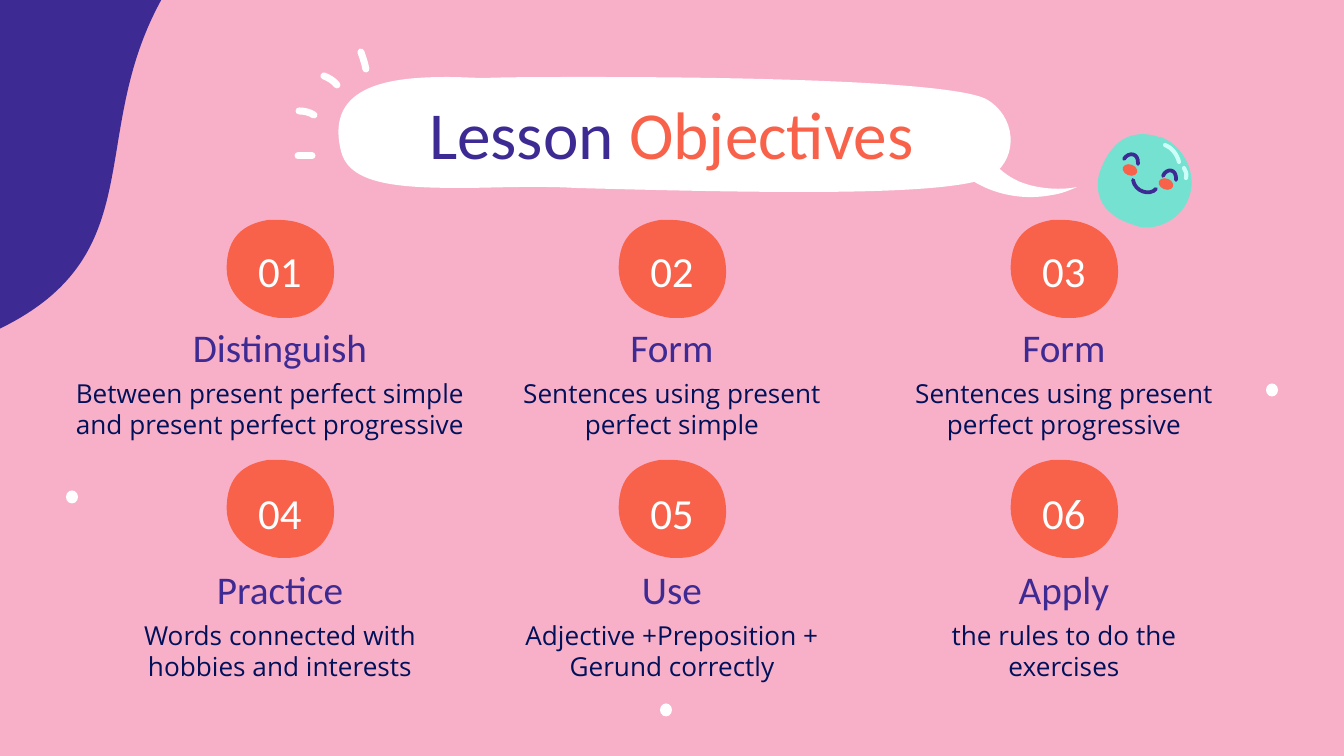
from lxml.etree import SubElement
from pptx import Presentation
from pptx.dml.color import RGBColor
from pptx.enum.shapes import MSO_SHAPE as Preset
from pptx.enum.text import MSO_ANCHOR as Anchor, MSO_AUTO_SIZE as AutoSize, PP_ALIGN as Align
from pptx.oxml.ns import qn
from pptx.util import Emu, Pt

WIDTH, HEIGHT = 1344, 756
SCALE = 9144000 / WIDTH
INSET = 13
COLORS = {
    "pink": "F8B0C8", "violet": "3E2A93", "coral": "F8624A", "white": "FFFFFF",
    "navy": "00115A", "mint": "75E1D1", "shine": "CCFFF7",
}
STYLES = {
    "title": {"size": Pt(36), "name": "Calibri"},
    "number": {"size": Pt(23), "name": "Calibri"},
    "heading": {"size": Pt(21), "name": "Calibri"},
    "body": {"size": Pt(14), "name": "Open Sans"},
}
CORNER = [(308, -149), (308, -149), (-117, -134), (-175, -35), (-208, 23), (-212, 126),
          (-194, 214), (-175, 302), (-132, 374), (-73, 356), (249, 263), (-16, 67), (308, -149)]
BUBBLE = [(252, 0), (209, 0), (173, 0), (146, 1), (135, 1), (122, 0), (109, 0),
          (56, 0), (-15, 6), (2, 74), (10, 107), (57, 111), (122, 111),
          (143, 111), (166, 110), (191, 110), (205, 110), (221, 110), (236, 111),
          (310, 113), (392, 115), (463, 115), (559, 115), (635, 111), (654, 98),
          (680, 79), (677, 39), (647, 22), (610, 4), (399, 0), (252, 0)]
TAIL = [(641, 64), (641, 64), (614, 88), (614, 88), (639, 114), (677, 125), (713, 118),
        (721, 117), (729, 114), (738, 110), (719, 114), (693, 111), (677, 103),
        (661, 95), (649, 82), (641, 64)]
BADGE = [(55, 0), (51, 0), (48, 0), (44, 0), (27, 3), (5, 11), (3, 43),
         (0, 74), (24, 94), (55, 98), (58, 98), (60, 98), (63, 98),
         (90, 98), (102, 81), (106, 71), (112, 62), (113, 32), (98, 17),
         (87, 5), (71, 0), (55, 0)]
HEAD = [(63, 3), (61, 3), (59, 3), (58, 2), (47, -1), (35, -1), (24, 6),
        (18, 10), (11, 18), (7, 26), (3, 34), (0, 41), (0, 49),
        (-1, 60), (4, 72), (12, 78), (18, 84), (23, 86), (30, 89),
        (34, 90), (38, 92), (42, 93), (61, 96), (82, 85), (90, 66),
        (101, 41), (86, 12), (63, 3)]
FACE = [
    ("violet", 2, [(26, 25), (30, 18), (41, 18), (40, 30)]),
    ("violet", 2, [(65, 42), (68, 34), (79, 34), (78, 46)]),
    ("violet", 2, [(35, 46), (37, 58), (52, 62), (58, 55)]),
    ("shine", 2.25, [(67, 11), (73, 13), (79, 20), (81, 28)]),
    ("shine", 2.25, [(86, 34), (88, 37), (89, 40), (88, 44)]),
]
CHEEKS = [(32, 36), (68, 50)]
RAYS = [
    [(65, 3), (66, 6), (69, 14), (70, 20)],
    [(28, 27), (33, 29), (38, 32), (41, 36)],
    [(3, 62), (8, 62), (13, 63), (18, 66)],
    [(2, 107), (7, 107), (11, 107), (16, 107)],
]
DOTS = [(72, 497), (666, 710), (1272, 390)]
OBJECTIVES = [
    ("Distinguish", "Between present perfect simple and present perfect progressive"),
    ("Form", "Sentences using present perfect simple"),
    ("Form", "Sentences using present perfect progressive"),
    ("Practice", "Words connected with hobbies and interests"),
    ("Use", "Adjective +Preposition + Gerund correctly"),
    ("Apply", "the rules to do the exercises"),
]
ROWS = [(202, 18), (444, 16)]
CENTER, PITCH = 672, 392


def px(length):
    """Turn px into EMU."""
    return Emu(round(length * SCALE))


def rgb(color):
    """Look up a named colour."""
    return RGBColor.from_string(COLORS[color])


def paint(shape, color):
    """Give a shape a plain fill with no line or shadow."""
    shape.shadow.inherit = False
    shape.fill.solid()
    shape.fill.fore_color.rgb = rgb(color)
    shape.line.fill.background()


def trace(slide, left, top, curve, close):
    """Build a freeform and join each three segments into one cubic curve."""
    start, *points = [(px(x), px(y)) for x, y in curve]
    outline = slide.shapes.build_freeform(*start)
    outline.add_line_segments(points, close=close)
    shape = outline.convert_to_shape(px(left), px(top))
    segments = list(shape._element.iter(qn("a:lnTo")))
    for first in range(0, len(segments), 3):
        trio = segments[first:first + 3]
        cubic = SubElement(trio[0].getparent(), qn("a:cubicBezTo"))
        trio[0].addprevious(cubic)
        for segment in trio:
            cubic.append(segment[0])
            segment.getparent().remove(segment)
    return shape


def add_blob(slide, left, top, curve, color):
    """Draw a filled outline."""
    paint(trace(slide, left, top, curve, True), color)


def add_stroke(slide, left, top, curve, color, weight):
    """Draw an open round-capped stroke."""
    stroke = trace(slide, left, top, curve, False)
    stroke.shadow.inherit = False
    stroke.fill.background()
    stroke.line.color.rgb = rgb(color)
    stroke.line.width = Pt(weight)
    stroke._element.spPr.find(qn("a:ln")).set("cap", "rnd")


def add_oval(slide, center, size, color, turn=0):
    """Draw an oval around a centre."""
    (x, y), (width, height) = center, size
    oval = slide.shapes.add_shape(Preset.OVAL, px(x - width / 2), px(y - height / 2),
                                  px(width), px(height))
    oval.rotation = turn
    paint(oval, color)


def write(holder, runs, style, anchor):
    """Fill a text holder with one centred paragraph of coloured runs."""
    frame = holder.text_frame
    settings = {"word_wrap": True, "auto_size": AutoSize.NONE, "vertical_anchor": anchor}
    settings |= {f"margin_{side}": px(INSET) for side in ("left", "top", "right", "bottom")}
    for key, value in settings.items():
        setattr(frame, key, value)
    paragraph = frame.paragraphs[0]
    paragraph.alignment = Align.CENTER
    for text, color in runs:
        run = paragraph.add_run()
        run.text = text
        for key, value in STYLES[style].items():
            setattr(run.font, key, value)
        run.font.color.rgb = rgb(color)


def add_label(slide, center, top, width, height, text, color, style, anchor):
    """Add a text box centred on a column."""
    label = slide.shapes.add_textbox(px(center - width / 2), px(top), px(width), px(height))
    write(label, [(text, color)], style, anchor)


def add_title(slide, left, top):
    """Place the speech bubble and the title on it."""
    add_blob(slide, left, top, BUBBLE, "white")
    add_blob(slide, left, top, TAIL, "white")
    title = slide.shapes.title
    box = {"left": left - 234, "top": top + 2, "width": 1133, "height": 87}
    for key, value in box.items():
        setattr(title, key, px(value))
    write(title, [("Lesson ", "violet"), ("Objectives", "coral")], "title", Anchor.TOP)
    slide.shapes._spTree.append(title._element)


def add_objective(slide, center, top, badge_drop, number, heading, body):
    """Place one numbered objective under its badge."""
    add_blob(slide, center - 56, top + badge_drop, BADGE, "coral")
    add_label(slide, center, top, 112, 107, f"{number:02d}", "white", "number", Anchor.BOTTOM)
    add_label(slide, center, top + 114, 376, 67, heading, "violet", "heading", Anchor.BOTTOM)
    width, shift = (429, -10) if number == 1 else (350, 0)
    add_label(slide, center + shift, top + 162, width, 87, body, "navy", "body", Anchor.TOP)


def add_smiley(slide, left, top):
    """Draw the smiling drop."""
    add_blob(slide, left, top, HEAD, "mint")
    for color, weight, curve in FACE:
        add_stroke(slide, left, top, curve, color, weight)
    for x, y in CHEEKS:
        add_oval(slide, (left + x, top + y), (15, 11), "coral", 21)


def main():
    """Build the slide and save it."""
    deck = Presentation()
    deck.slide_width, deck.slide_height = px(WIDTH), px(HEIGHT)
    slide = deck.slides.add_slide(deck.slide_layouts[5])
    slide.background.fill.solid()
    slide.background.fill.fore_color.rgb = rgb("pink")
    for dot in DOTS:
        add_oval(slide, dot, (12, 13), "white")
    add_blob(slide, 0, 0, CORNER, "violet")
    add_title(slide, 339, 77)
    for index, (heading, body) in enumerate(OBJECTIVES):
        row, column = divmod(index, 3)
        add_objective(slide, CENTER + (column - 1) * PITCH, *ROWS[row], index + 1, heading, body)
    for ray in RAYS:
        add_stroke(slide, 296, 49, ray, "white", 3.75)
    add_smiley(slide, 1098, 134)
    deck.save("out.pptx")


if __name__ == "__main__":
    main()
